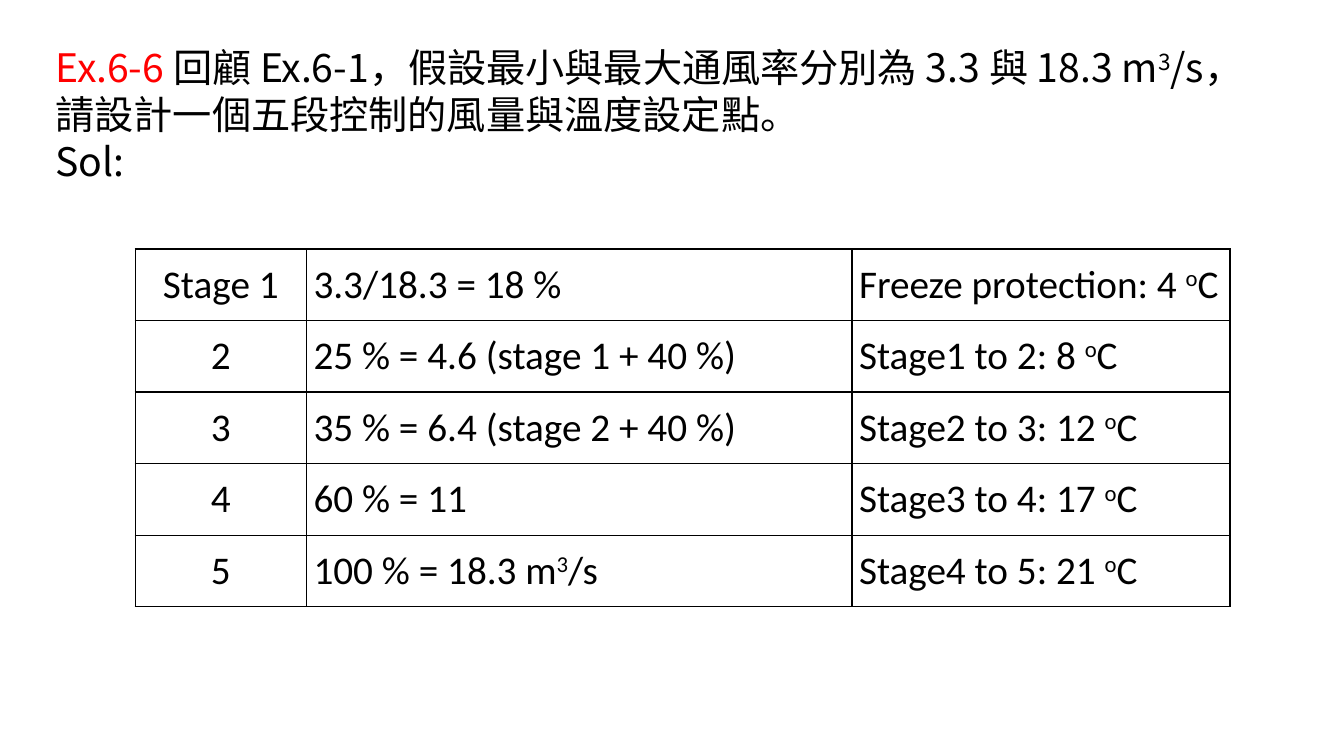
from lxml import etree
from pptx import Presentation, util as u
from pptx.dml.color import RGBColor
from pptx.enum import text
from pptx.oxml.ns import qn

BLACK, RED = "000000", "FF0000"
TITLE_FONT, TABLE_FONT = "Noto Sans CJK SC", "Calibri"


def color(hex_string):
    return RGBColor.from_string(hex_string)


def write_runs(paragraph, content, font_name):
    """Add runs to a paragraph; every second part between ^ marks is superscript."""
    for index, part in enumerate(content.split("^")):
        run = paragraph.add_run()
        run.text = part
        run.font.size = u.Pt(28)
        run.font.name = font_name
        run.font.color.rgb = color(BLACK)
        properties = run._r.get_or_add_rPr()
        etree.SubElement(properties, qn("a:ea"), typeface=font_name)
        if index % 2:
            properties.set("baseline", "30000")


presentation = Presentation()
presentation.slide_width = u.Inches(13.33)
presentation.slide_height = u.Inches(7.5)
slide = presentation.slides.add_slide(presentation.slide_layouts[5])

# Exercise statement in the title
title = slide.shapes.title
title.left, title.top = u.Inches(0.45), u.Inches(0.37)
title.width, title.height = u.Inches(12.2), u.Inches(1.51)
frame = title.text_frame
frame.word_wrap = True
frame.auto_size = text.MSO_AUTO_SIZE.SHAPE_TO_FIT_TEXT
frame.vertical_anchor = text.MSO_ANCHOR.MIDDLE

statement = frame.paragraphs[0]
write_runs(statement, "Ex.6-6 ", TITLE_FONT)
statement.runs[0].font.color.rgb = color(RED)
write_runs(statement, "回顧 Ex.6-1，假設最小與最大通風率分別為 3.3 與 18.3 m^3^/s，"
           "請設計一個五段控制的風量與溫度設定點。", TITLE_FONT)
write_runs(frame.add_paragraph(), "Sol:", TITLE_FONT)
for paragraph in frame.paragraphs:
    paragraph.alignment = text.PP_ALIGN.LEFT
    paragraph.line_spacing = u.Pt(33.6)

# Stages: name, ventilation rate, temperature set point
stages = [
    ("Stage 1", "3.3/18.3 = 18 %", "Freeze protection: 4 ^o^C"),
    ("2", "25 % = 4.6 (stage 1 + 40 %)", "Stage1 to 2: 8 ^o^C"),
    ("3", "35 % = 6.4 (stage 2 + 40 %)", "Stage2 to 3: 12 ^o^C"),
    ("4", "60 % = 11", "Stage3 to 4: 17 ^o^C"),
    ("5", "100 % = 18.3 m^3^/s", "Stage4 to 5: 21 ^o^C"),
]
column_widths = [1.7, 5.41, 3.75]
row_height = 0.71

table = slide.shapes.add_table(
    len(stages), len(column_widths), u.Inches(1.34), u.Inches(2.47),
    u.Inches(sum(column_widths)), u.Inches(row_height * len(stages))).table
table.first_row = table.horz_banding = False
for column, width in zip(table.columns, column_widths):
    column.width = u.Inches(width)

for row, stage in zip(table.rows, stages):
    row.height = u.Inches(row_height)
    for column_index, (cell, content) in enumerate(zip(row.cells, stage)):
        cell.vertical_anchor = text.MSO_ANCHOR.MIDDLE
        cell.margin_left = cell.margin_right = u.Inches(0.07)
        cell.margin_top = cell.margin_bottom = 0
        cell.fill.background()
        paragraph = cell.text_frame.paragraphs[0]
        paragraph.alignment = text.PP_ALIGN.JUSTIFY if column_index else text.PP_ALIGN.CENTER
        write_runs(paragraph, content, TABLE_FONT)

        # Borders come before the fill in the cell properties
        properties = cell._tc.get_or_add_tcPr()
        for position, side in enumerate(["lnL", "lnR", "lnT", "lnB"]):
            border = etree.Element(qn(f"a:{side}"), w=str(u.Pt(1)))
            solid = etree.SubElement(border, qn("a:solidFill"))
            etree.SubElement(solid, qn("a:srgbClr"), val=BLACK)
            properties.insert(position, border)

presentation.save("out.pptx")
